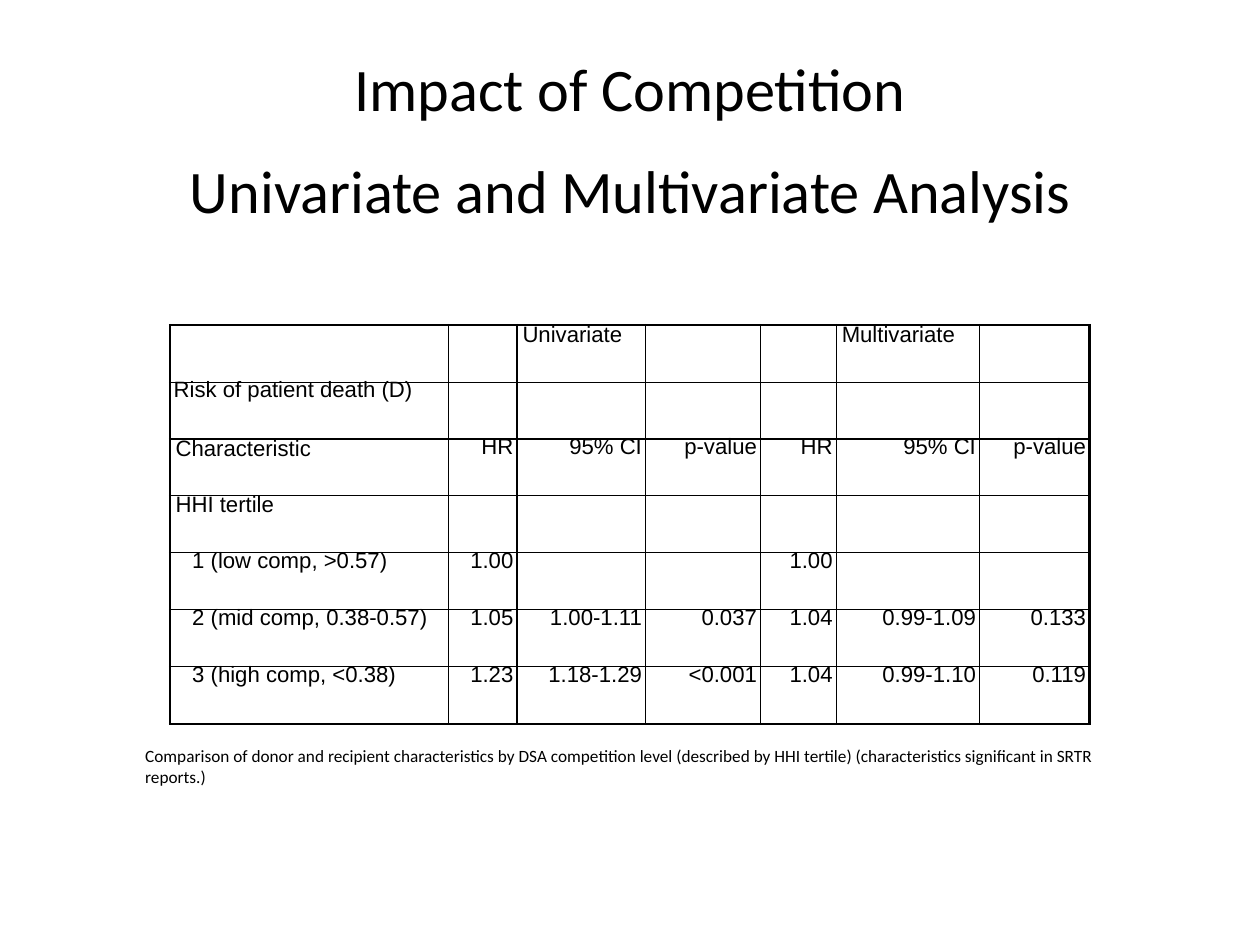
from lxml import etree
from pptx import Presentation
from pptx import util as u
from pptx.dml.color import RGBColor
from pptx.enum import text
from pptx.oxml.ns import qn

TITLE = ["Impact of Competition", "Univariate and Multivariate Analysis"]
CAPTION = ["Comparison of donor and recipient characteristics by DSA competition level "
           "(described by HHI tertile) (characteristics significant in SRTR reports.)"]
MEASURES = ["HR", "95% CI", "p-value"]
RISK_ROWS = [
    ["", "", "Univariate", "", "", "Multivariate", ""],
    ["Risk of patient death (D)"] + [""] * 6,
    ["Characteristic"] + MEASURES * 2,
    ["HHI tertile"] + [""] * 6,
    ["1 (low comp, >0.57)", "1.00", "", "", "1.00", "", ""],
    ["2 (mid comp, 0.38-0.57)", "1.05", "1.00-1.11", "0.037", "1.04", "0.99-1.09", "0.133"],
    ["3 (high comp, <0.38)", "1.23", "1.18-1.29", "<0.001", "1.04", "0.99-1.10", "0.119"],
]
GROUP_LABELS = {"Univariate", "Multivariate", "Characteristic", "HHI tertile"}
FIRST_TERTILE_ROW = 4
COLUMN_WIDTHS = [226.5, 55.5, 104.5, 93.5, 61.5, 116.5, 89.5]
ROW_HEIGHT = 46.3
THEME = {
    "ink": "000000", "heading_font": "Calibri", "table_font": "Arial",
    "title": 49, "table": 18, "caption": 14, "outer_line": 2.25, "inner_line": 1,
}


def add_span(para, words, font, size):
    span = para.add_run()
    span.text = words
    span.font.name = font
    span.font.size = u.Pt(size)
    span.font.color.rgb = RGBColor.from_string(THEME["ink"])


def set_margins(target, inset, indent=0):
    target.margin_left = u.Pt(inset + indent)
    target.margin_right = target.margin_top = target.margin_bottom = u.Pt(inset)


def add_text(page, bounds, lines, size, align, wrap, gap=0):
    box = page.shapes.add_textbox(*map(u.Pt, bounds))
    frame = box.text_frame
    set_margins(frame, 0)
    frame.word_wrap = wrap
    for index, line in enumerate(lines):
        para = frame.add_paragraph() if index else frame.paragraphs[0]
        para.alignment = align
        para.space_before = u.Pt(gap)
        add_span(para, line, THEME["heading_font"], size)


def add_borders(cell, outer_sides):
    properties = cell._tc.get_or_add_tcPr()
    for place, side in enumerate("LRTB"):
        width = THEME["outer_line" if side in outer_sides else "inner_line"]
        line = etree.Element(qn("a:ln" + side), w=str(u.Pt(width)))
        fill = etree.SubElement(line, qn("a:solidFill"))
        etree.SubElement(fill, qn("a:srgbClr"), val=THEME["ink"])
        properties.insert(place, line)


def fill_cell(cell, words, row, column):
    inset = 4.5 if words in GROUP_LABELS else 3
    indent = 15 if column == 0 and row >= FIRST_TERTILE_ROW else 0
    set_margins(cell, inset, indent)
    para = cell.text_frame.paragraphs[0]
    para.line_spacing = 0.58
    left = row == 0 or column == 0
    para.alignment = text.PP_ALIGN.LEFT if left else text.PP_ALIGN.RIGHT
    add_span(para, words, THEME["table_font"], THEME["table"])


def add_risk_table(page, left, top):
    rows, columns = len(RISK_ROWS), len(COLUMN_WIDTHS)
    frame = page.shapes.add_table(rows, columns, u.Pt(left), u.Pt(top),
                                  u.Pt(sum(COLUMN_WIDTHS)), u.Pt(rows * ROW_HEIGHT))
    table = frame.table
    table.first_row = table.horz_banding = False
    for column, width in zip(table.columns, COLUMN_WIDTHS):
        column.width = u.Pt(width)
    for r, values in enumerate(RISK_ROWS):
        table.rows[r].height = u.Pt(ROW_HEIGHT)
        for c, words in enumerate(values):
            cell = table.cell(r, c)
            cell.fill.background()
            edges = {"L": c == 0, "R": c == columns - 1, "T": r == 0, "B": r == rows - 1}
            add_borders(cell, [side for side, outer in edges.items() if outer])
            if words:
                fill_cell(cell, words, r, c)


def main():
    deck = Presentation()
    deck.slide_width, deck.slide_height = u.Pt(1024), u.Pt(768)
    page = deck.slides.add_slide(deck.slide_layouts[6])
    add_text(page, (154, 42, 716, 136), TITLE, THEME["title"],
             text.PP_ALIGN.CENTER, False, gap=24)
    add_risk_table(page, 138.2, 264.2)
    add_text(page, (118, 606, 789, 34), CAPTION, THEME["caption"],
             text.PP_ALIGN.LEFT, True)
    deck.save("out.pptx")


if __name__ == "__main__":
    main()
